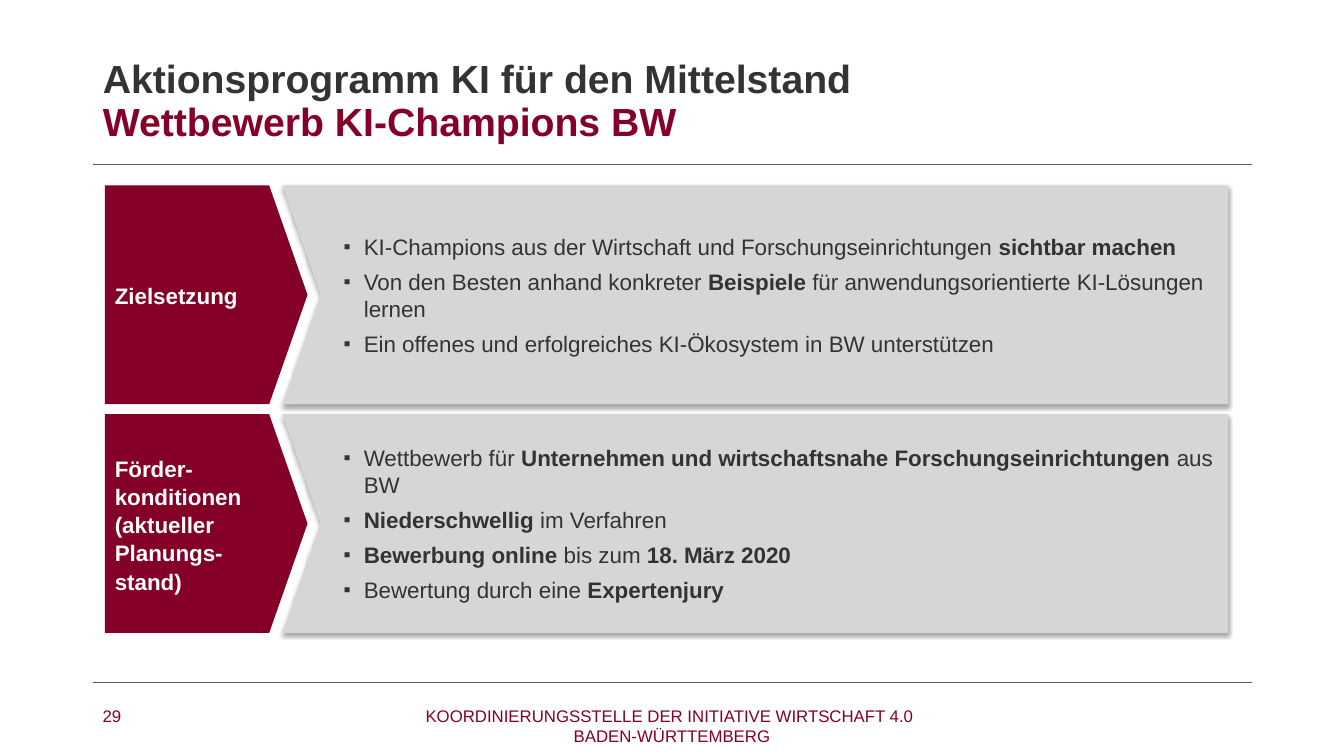
"""Builds the slide on the goals and funding terms of the KI-Champions BW competition."""
from lxml import etree
from pptx import Presentation
from pptx.dml.color import RGBColor
from pptx.enum.shapes import MSO_CONNECTOR, MSO_SHAPE
from pptx.enum.text import MSO_ANCHOR, MSO_AUTO_SIZE, PP_ALIGN
from pptx.oxml.ns import qn
from pptx.util import Inches, Pt

STRAIGHT = MSO_CONNECTOR.STRAIGHT
PENTAGON = MSO_SHAPE.PENTAGON
MIDDLE = MSO_ANCHOR.MIDDLE
NO_FIT = MSO_AUTO_SIZE.NONE
LEFT, CENTER = PP_ALIGN.LEFT, PP_ALIGN.CENTER

WINE = RGBColor(0x84, 0x00, 0x29)
DARK = RGBColor(0x33, 0x33, 0x33)
RULE_GRAY = RGBColor(0x58, 0x59, 0x5B)
PANEL_GRAY = RGBColor(0xD6, 0xD6, 0xD6)
WHITE = RGBColor(0xFF, 0xFF, 0xFF)

TITLE_FORMAT = {"name": "Arial", "size": Pt(28), "bold": True}
LABEL_FORMAT = {"name": "Arial", "size": Pt(16), "bold": True}
FOOTER_FORMAT = {"name": "Arial", "size": Pt(12), "bold": False}
PLAIN_FORMAT = {"name": "Arial", "size": Pt(16), "bold": False}
STRONG_FORMAT = {**PLAIN_FORMAT, "bold": True}

TITLE_LINES = [
    ("Aktionsprogramm KI für den Mittelstand", DARK),
    ("Wettbewerb KI-Champions BW", WINE),
]
SECTIONS = [
    ("Zielsetzung", [
        [("KI-Champions aus der Wirtschaft und Forschungseinrichtungen ", False),
         ("sichtbar machen", True)],
        [("Von den Besten anhand konkreter ", False), ("Beispiele", True),
         (" für anwendungsorientierte KI-Lösungen lernen", False)],
        [("Ein offenes und erfolgreiches KI-Ökosystem in BW unterstützen", False)],
    ]),
    ("Förder-konditionen (aktueller Planungs-stand)", [
        [("Wettbewerb für ", False),
         ("Unternehmen und wirtschaftsnahe Forschungseinrichtungen", True),
         (" aus BW", False)],
        [("Niederschwellig", True), (" im Verfahren", False)],
        [("Bewerbung online ", True), ("bis zum ", False), ("18. März 2020", True)],
        [("Bewertung durch eine ", False), ("Expertenjury", True)],
    ]),
]
FOOTERS = [
    (4.12, 5.09, CENTER,
     ["KOORDINIERUNGSSTELLE DER INITIATIVE WIRTSCHAFT 4.0 ", "BADEN-WÜRTTEMBERG"]),
    (0.92, 0.76, LEFT, ["29"]),
]

SECTION_TOP, SECTION_HEIGHT, SECTION_STEP = 1.84, 2.17, 2.27
PANEL_LEFT, PANEL_RIGHT, NOTCH = 2.8, 12.18, 0.38
LABEL_LEFT, LABEL_WIDTH = 1.04, 2.01


def add_run(paragraph, text, color, font_format):
    run = paragraph.add_run()
    run.text = text
    for attribute, value in font_format.items():
        setattr(run.font, attribute, value)
    run.font.color.rgb = color


def next_paragraph(frame, index):
    return frame.add_paragraph() if index else frame.paragraphs[0]


prs = Presentation()
prs.slide_width, prs.slide_height = Inches(13.33), Inches(7.5)
slide = prs.slides.add_slide(prs.slide_layouts[5])

for rule_y in (6.77, 1.63):
    rule = slide.shapes.add_connector(
        STRAIGHT, Inches(0.92), Inches(rule_y), Inches(12.42), Inches(rule_y))
    rule.line.color.rgb = RULE_GRAY
    rule.line.width = Pt(0.5)
    etree.SubElement(rule._element.spPr, qn("a:effectLst"))

title = slide.shapes.title
title.left, title.top = Inches(0.92), Inches(0.4)
title.width, title.height = Inches(11.27), Inches(1.23)
title.text_frame.auto_size = NO_FIT
title.text_frame.vertical_anchor = MIDDLE
for index, (text, color) in enumerate(TITLE_LINES):
    paragraph = next_paragraph(title.text_frame, index)
    paragraph.alignment = LEFT
    paragraph.line_spacing = 0.9
    paragraph.space_before = Pt(0)
    add_run(paragraph, text, color, TITLE_FORMAT)

for section, (heading, points) in enumerate(SECTIONS):
    top = SECTION_TOP + section * SECTION_STEP
    bottom = top + SECTION_HEIGHT

    corners = [
        (Inches(x), Inches(y)) for x, y in (
            (PANEL_LEFT, top), (PANEL_RIGHT, top), (PANEL_RIGHT, bottom),
            (PANEL_LEFT, bottom), (PANEL_LEFT + NOTCH, (top + bottom) / 2))]
    outline = slide.shapes.build_freeform(*corners[0])
    outline.add_line_segments(corners[1:], close=True)
    panel = outline.convert_to_shape()
    panel.fill.solid()
    panel.fill.fore_color.rgb = PANEL_GRAY
    panel.line.fill.background()
    panel.shadow.inherit = False
    shadow = etree.SubElement(
        panel._element.spPr.find(qn("a:effectLst")), qn("a:outerShdw"),
        blurRad=str(Pt(3.1)), dist=str(Pt(1.8)), dir="5400000", rotWithShape="0")
    shadow_color = etree.SubElement(shadow, qn("a:srgbClr"), val="000000")
    etree.SubElement(shadow_color, qn("a:alpha"), val="35000")

    panel.text_frame.word_wrap = True
    panel.text_frame.vertical_anchor = MIDDLE
    for index, pieces in enumerate(points):
        paragraph = next_paragraph(panel.text_frame, index)
        properties = paragraph._p.get_or_add_pPr()
        properties.set("marL", str(Inches(0.71)))
        properties.set("indent", str(Inches(-0.2)))
        etree.SubElement(properties, qn("a:buSzPct"), val="90000")
        etree.SubElement(properties, qn("a:buFont"), typeface="Arial")
        etree.SubElement(properties, qn("a:buChar"), char="▪")
        paragraph.alignment = LEFT
        paragraph.space_after = Pt(6)
        for text, strong in pieces:
            add_run(paragraph, text, DARK, STRONG_FORMAT if strong else PLAIN_FORMAT)

    label = slide.shapes.add_shape(
        PENTAGON, Inches(LABEL_LEFT), Inches(top), Inches(LABEL_WIDTH), Inches(SECTION_HEIGHT))
    label.adjustments[0] = NOTCH / LABEL_WIDTH
    label.fill.solid()
    label.fill.fore_color.rgb = WINE
    label.line.fill.background()
    label.shadow.inherit = False
    label_frame = label.text_frame
    label_frame.word_wrap = True
    label_frame.vertical_anchor = MIDDLE
    label_frame.margin_top, label_frame.margin_bottom = Inches(0.09), Inches(0.08)
    label_frame.paragraphs[0].alignment = LEFT
    label_frame.paragraphs[0].line_spacing = 1.05
    add_run(label_frame.paragraphs[0], heading, WHITE, LABEL_FORMAT)

for left, width, alignment, lines in FOOTERS:
    footer = slide.shapes.add_textbox(Inches(left), Inches(6.95), Inches(width), Inches(0.4))
    footer.text_frame.word_wrap = True
    for index, text in enumerate(lines):
        paragraph = next_paragraph(footer.text_frame, index)
        paragraph.alignment = alignment
        add_run(paragraph, text, WINE, FOOTER_FORMAT)

prs.save("out.pptx")
